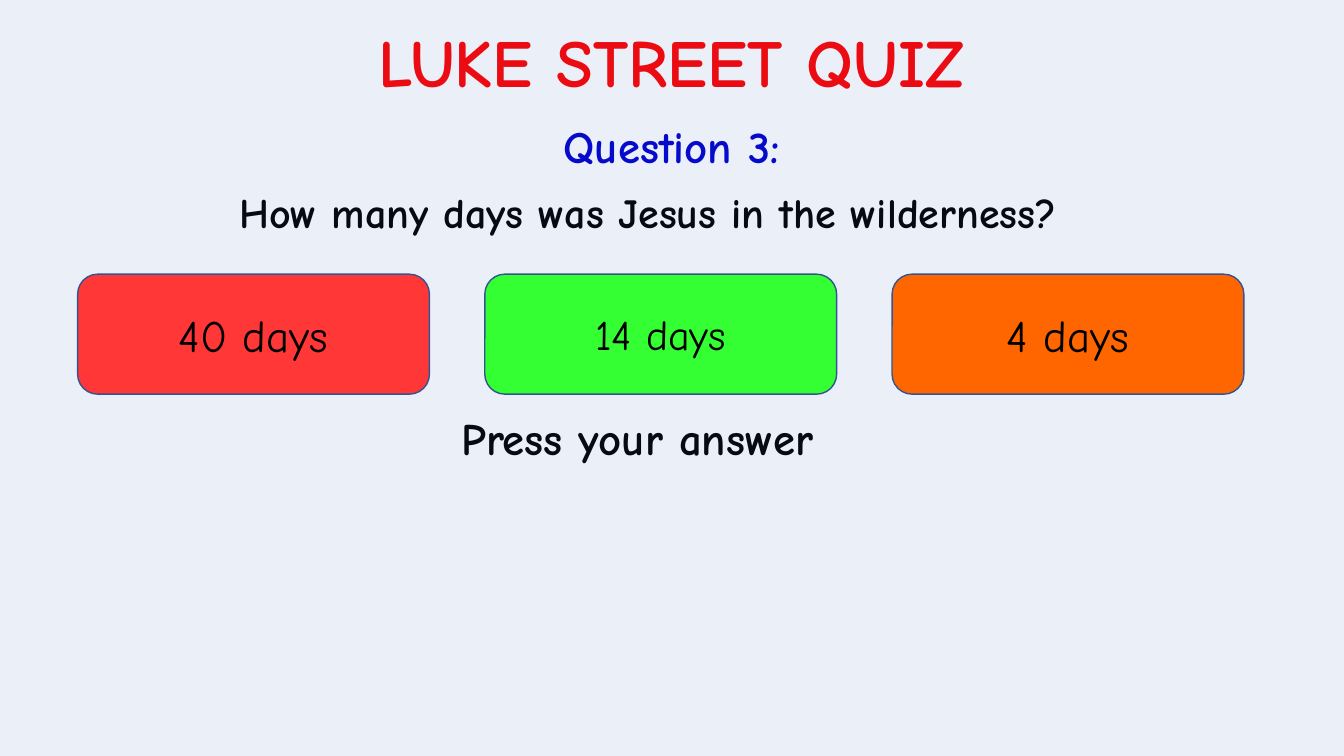
"""Build the third question slide of the Luke Street quiz."""
import dataclasses
import typing

import pptx
import pptx.dml.color
import pptx.enum.shapes
import pptx.enum.text
import pptx.oxml
import pptx.oxml.ns
import pptx.util

Pt = pptx.util.Pt
Align = pptx.enum.text.PP_ALIGN
Anchor = pptx.enum.text.MSO_ANCHOR
Kind = pptx.enum.shapes.MSO_SHAPE

WIDE, HIGH = 960, 540
FONT = "Comic Neue"
COLORS = {
    "title": "FF0000",
    "label": "0000CC",
    "text": "000000",
    "tint": "4472C4",
    "edge": "325491",
    "red": "FF3737",
    "green": "33FF33",
    "orange": "FF6600",
}


@dataclasses.dataclass(frozen=True)
class Line:
    text: str
    box: tuple[float, float, float, float]
    style: dict[str, typing.Any]


@dataclasses.dataclass(frozen=True)
class Answer:
    text: str
    fill: str
    size: float


LINES = [
    Line("How many days was Jesus in the wilderness?", (37.44, 135.36, 851.04, 51.84),
         {"size": 30, "space": Pt(30), "before": 10}),
    Line("Press your answer", (322.56, 294.48, 484.56, 51.84),
         {"align": Align.LEFT, "space": 0.9, "before": 7.5}),
    Line("Question 3:", (321.12, 81.36, 317.52, 46.08), {"color": "label"}),
]
ANSWERS = [
    Answer("40 days", "red", 32),
    Answer("14 days", "green", 30),
    Answer("4 days", "orange", 32),
]
LEFT, TOP, STEP = 55.44, 195.84, 290.88
WIDTH, HEIGHT = 251.28, 85.68


def rgb(name: str) -> pptx.dml.color.RGBColor:
    """Return a named colour."""
    return pptx.dml.color.RGBColor.from_string(COLORS[name])


def write(shape: typing.Any, text: str, *, size: float = 32, color: str = "text",
          bold: bool = True, align: Align = Align.CENTER, anchor: Anchor = Anchor.TOP,
          space: typing.Any = None, before: float = 0) -> None:
    """Put one formatted paragraph in a shape."""
    frame = shape.text_frame
    frame.word_wrap = True
    frame.auto_size = pptx.enum.text.MSO_AUTO_SIZE.NONE
    frame.vertical_anchor = anchor
    para = frame.paragraphs[0]
    para.alignment = align
    para.line_spacing = space
    para.space_before = Pt(before)
    run = para.add_run()
    run.text = text
    run.font.name = FONT
    run.font.size = Pt(size)
    run.font.bold = bold
    run.font.color.rgb = rgb(color)


def block(slide: typing.Any, kind: Kind, box: tuple[float, ...], fill: str) -> typing.Any:
    """Add a flat filled shape."""
    shape = slide.shapes.add_shape(kind, *map(Pt, box))
    shape.shadow.inherit = False
    shape.fill.solid()
    shape.fill.fore_color.rgb = rgb(fill)
    return shape


def tint(slide: typing.Any) -> None:
    """Lay a pale blue wash over the slide."""
    wash = block(slide, Kind.RECTANGLE, (0, 0, WIDE, HIGH), "tint")
    wash.line.fill.background()
    tone = wash.fill._xPr.find(".//" + pptx.oxml.ns.qn("a:srgbClr"))
    tone.append(pptx.oxml.parse_xml(
        f'<a:alpha {pptx.oxml.ns.nsdecls("a")} val="10000"/>'))


def button(slide: typing.Any, index: int, answer: Answer) -> None:
    """Add one answer button."""
    box = (LEFT + index * STEP, TOP, WIDTH, HEIGHT)
    shape = block(slide, Kind.ROUNDED_RECTANGLE, box, answer.fill)
    shape.line.color.rgb = rgb("edge")
    shape.line.width = Pt(1)
    write(shape, answer.text, size=answer.size, bold=False, anchor=Anchor.MIDDLE)


def main() -> None:
    """Build and save the slide."""
    deck = pptx.Presentation()
    deck.slide_width, deck.slide_height = Pt(WIDE), Pt(HIGH)
    slide = deck.slides.add_slide(deck.slide_layouts.get_by_name("Title Only"))
    title = slide.shapes.title
    title.left, title.top, title.width, title.height = map(
        Pt, (224.64, 10.8, 509.76, 65.52))
    write(title, "LUKE STREET QUIZ", size=48, color="title")
    for line in LINES:
        write(slide.shapes.add_textbox(*map(Pt, line.box)), line.text, **line.style)
    tint(slide)
    for index, answer in enumerate(ANSWERS):
        button(slide, index, answer)
    deck.save("out.pptx")


if __name__ == "__main__":
    main()
